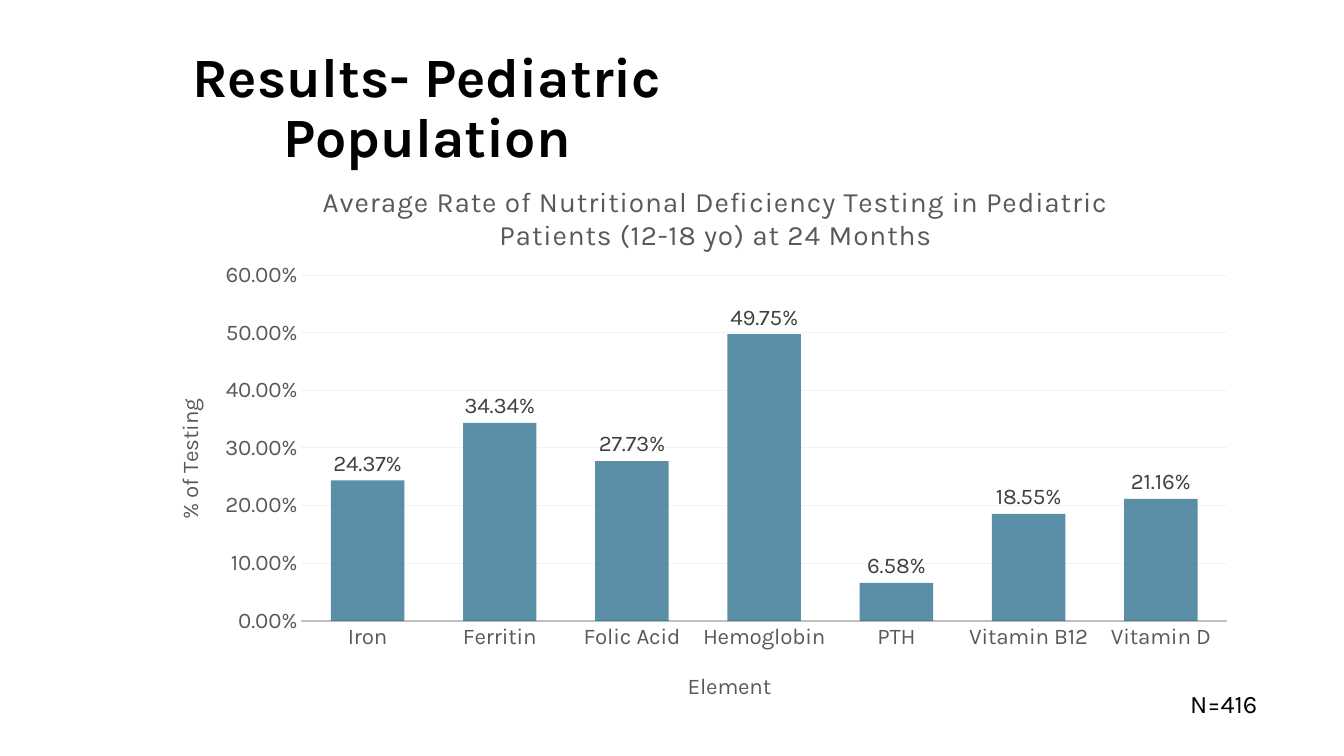
"""Build a slide with a column chart of pediatric nutritional deficiency testing."""

from dataclasses import dataclass

from lxml import etree
from pptx import Presentation
from pptx.chart.data import CategoryChartData
from pptx.dml.color import RGBColor
from pptx.enum.chart import XL_CHART_TYPE, XL_LABEL_POSITION, XL_TICK_MARK
from pptx.enum.text import PP_ALIGN
from pptx.oxml.ns import qn
from pptx.util import Inches, Pt

COLUMN_CLUSTERED = XL_CHART_TYPE.COLUMN_CLUSTERED
OUTSIDE_END = XL_LABEL_POSITION.OUTSIDE_END
NO_TICK = XL_TICK_MARK.NONE
CENTER = PP_ALIGN.CENTER
RIGHT = PP_ALIGN.RIGHT

BLACK = RGBColor(0x00, 0x00, 0x00)
LABEL_GRAY = RGBColor(0x40, 0x40, 0x40)
TEXT_GRAY = RGBColor(0x59, 0x59, 0x59)
AXIS_GRAY = RGBColor(0xBF, 0xBF, 0xBF)
GRID_GRAY = RGBColor(0xF2, 0xF2, 0xF2)
BAR_BLUE = RGBColor(0x15, 0x60, 0x82)

FONT_NAME = "Karla"
PERCENT_FORMAT = "0.00%"
CHART_LEFT, CHART_TOP, CHART_WIDTH, CHART_HEIGHT = 1.43, 1.53, 10.95, 5.58

TESTING_RATES = {
    "Iron": 0.2437,
    "Ferritin": 0.3434,
    "Folic Acid": 0.2773,
    "Hemoglobin": 0.4975,
    "PTH": 0.0658,
    "Vitamin B12": 0.1855,
    "Vitamin D": 0.2116,
}


@dataclass(frozen=True)
class TextLabel:
    text: str
    left: float
    top: float
    width: float
    height: float
    size: float
    alignment: PP_ALIGN
    bold: bool = False
    line_spacing: float = 1.0
    inset: float = 0.1


@dataclass(frozen=True)
class ChartHeading:
    text: str
    left: float
    top: float
    size: float
    letter_spacing: int = 0


LABELS = (
    TextLabel("Results- Pediatric Population", 0.45, 0.39, 7.57, 0.84, 39.6, CENTER, True, 0.9),
    TextLabel("N=416", 8.75, 6.78, 3.82, 0.4, 18, RIGHT, inset=0.05),
)
CHART_TITLE = ChartHeading(
    "Average Rate of Nutritional Deficiency Testing in Pediatric Patients (12-18 yo) at 24 Months",
    3.15, 1.76, 20, 50,
)
CATEGORY_TITLE = ChartHeading("Element", 6.78, 6.63, 16)
VALUE_TITLE = ChartHeading("% of Testing", 1.7, 3.92, 16)


def style_font(font, size: float, color: RGBColor, bold: bool = False) -> None:
    font.name = FONT_NAME
    font.size = Pt(size)
    font.bold = bold
    font.color.rgb = color


def add_label(slide, label: TextLabel) -> None:
    shape = slide.shapes.add_textbox(
        Inches(label.left), Inches(label.top), Inches(label.width), Inches(label.height)
    )
    text_frame = shape.text_frame
    text_frame.word_wrap = True
    text_frame.margin_left = text_frame.margin_right = Inches(0.1)
    text_frame.margin_top = text_frame.margin_bottom = Inches(label.inset)
    text_frame.text = label.text
    paragraph = text_frame.paragraphs[0]
    paragraph.alignment = label.alignment
    paragraph.line_spacing = label.line_spacing
    style_font(paragraph.runs[0].font, label.size, BLACK, label.bold)


def set_layout(element, left: float, top: float, width: float = 0, height: float = 0) -> None:
    layout = element.find(qn("c:layout"))
    if layout is None:
        layout = etree.Element(qn("c:layout"))
        element.insert(0, layout)
    manual = etree.SubElement(layout, qn("c:manualLayout"))
    settings = {"xMode": "edge", "yMode": "edge"}
    if width:
        settings = {"layoutTarget": "inner"} | settings
    settings["x"] = (left - CHART_LEFT) / CHART_WIDTH
    settings["y"] = (top - CHART_TOP) / CHART_HEIGHT
    if width:
        settings |= {"w": width / CHART_WIDTH, "h": height / CHART_HEIGHT}
    for name, value in settings.items():
        etree.SubElement(manual, qn(f"c:{name}")).set("val", str(value))


def set_heading(title, heading: ChartHeading) -> None:
    title.text_frame.text = heading.text
    run = title.text_frame.paragraphs[0].runs[0]
    style_font(run.font, heading.size, TEXT_GRAY)
    if heading.letter_spacing:
        run.font._element.set("spc", str(heading.letter_spacing))
    set_layout(title.element, heading.left, heading.top)


def style_axis(axis, heading: ChartHeading) -> None:
    axis.major_tick_mark = axis.minor_tick_mark = NO_TICK
    style_font(axis.tick_labels.font, 16, TEXT_GRAY)
    set_heading(axis.axis_title, heading)


def style_columns(plot) -> None:
    plot.gap_width = 80
    plot.overlap = 25
    plot.vary_by_categories = False
    fill = plot.series[0].format.fill
    fill.solid()
    fill.fore_color.rgb = BAR_BLUE
    color = plot.series[0]._element.find(".//" + qn("a:srgbClr"))
    etree.SubElement(color, qn("a:alpha")).set("val", "70000")
    plot.has_data_labels = True
    labels = plot.data_labels
    labels.show_value = True
    labels.position = OUTSIDE_END
    labels.number_format = PERCENT_FORMAT
    labels.number_format_is_linked = False
    style_font(labels.font, 16, LABEL_GRAY)


def add_testing_chart(slide) -> None:
    data = CategoryChartData(number_format=PERCENT_FORMAT)
    data.categories = TESTING_RATES.keys()
    data.add_series("Series 1", TESTING_RATES.values())
    chart = slide.shapes.add_chart(
        COLUMN_CLUSTERED,
        Inches(CHART_LEFT), Inches(CHART_TOP), Inches(CHART_WIDTH), Inches(CHART_HEIGHT),
        data,
    ).chart
    style_font(chart.font, 16, BLACK)
    chart.has_legend = False
    set_heading(chart.chart_title, CHART_TITLE)

    category_axis = chart.category_axis
    style_axis(category_axis, CATEGORY_TITLE)
    category_axis.format.line.color.rgb = AXIS_GRAY
    category_axis.format.line.width = Pt(1.25)

    value_axis = chart.value_axis
    style_axis(value_axis, VALUE_TITLE)
    value_axis.minimum_scale, value_axis.maximum_scale = 0, 0.6
    value_axis.major_unit = 0.1
    value_axis.tick_labels.number_format = PERCENT_FORMAT
    value_axis.tick_labels.number_format_is_linked = False
    value_axis.format.line.fill.background()
    grid_line = value_axis.major_gridlines.format.line
    grid_line.color.rgb = GRID_GRAY
    grid_line.width = Pt(0.75)

    style_columns(chart.plots[0])
    plot_area = chart.element.find(".//" + qn("c:plotArea"))
    set_layout(plot_area, 2.99, 2.73, 9.18, 3.43)


def main() -> None:
    presentation = Presentation()
    presentation.slide_width = Inches(13.33)
    presentation.slide_height = Inches(7.5)
    slide = presentation.slides.add_slide(presentation.slide_layouts[6])
    add_testing_chart(slide)
    for label in LABELS:
        add_label(slide, label)
    presentation.save("out.pptx")


if __name__ == "__main__":
    main()
